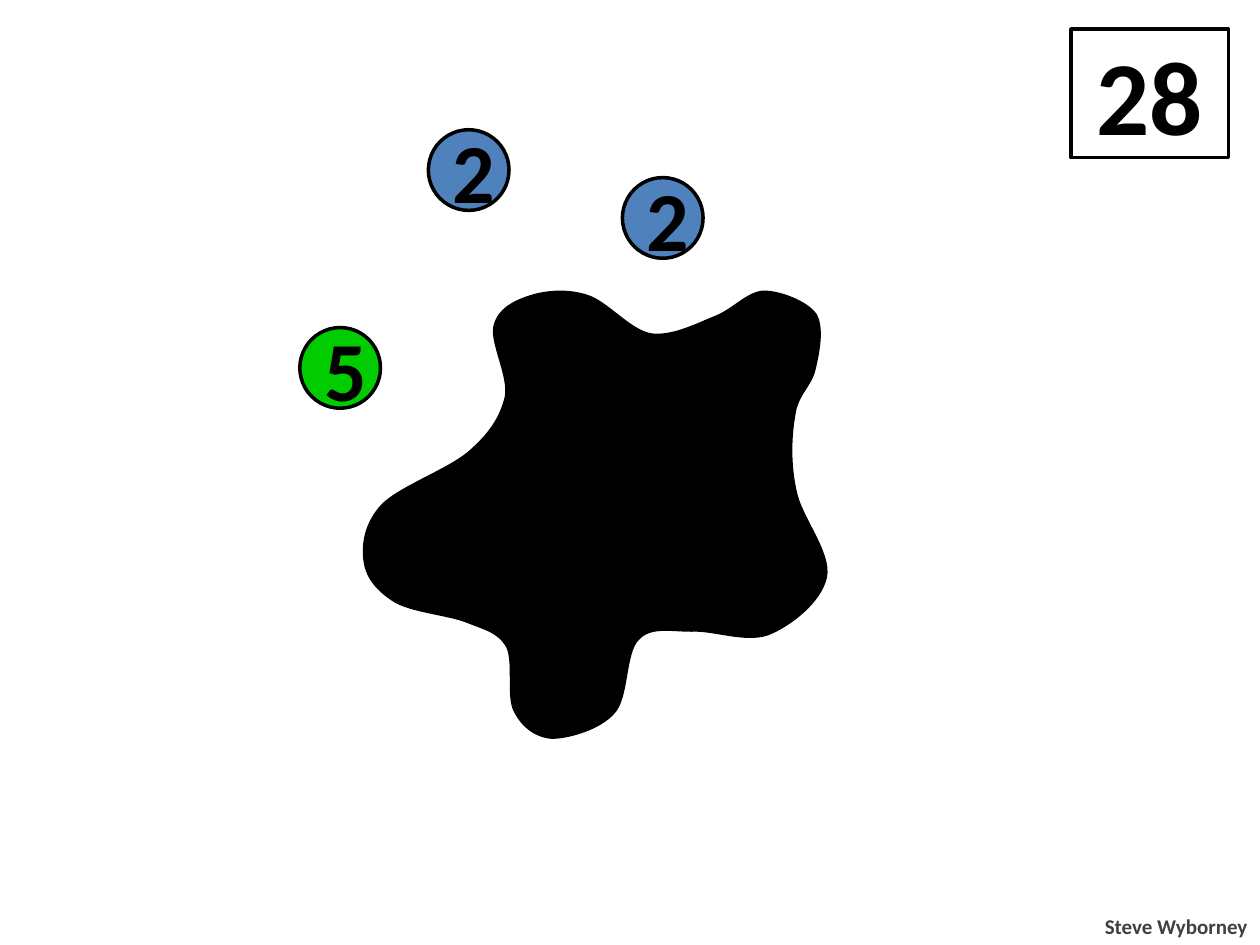
"""Build a number puzzle slide: a total, number discs and an ink blot over some of them."""
from dataclasses import dataclass

from pptx import Presentation
from pptx.dml.color import RGBColor
from pptx.enum.shapes import MSO_SHAPE
from pptx.enum.text import MSO_ANCHOR, MSO_AUTO_SIZE, PP_ALIGN
from pptx.oxml.ns import qn
from pptx.shapes.autoshape import Shape
from pptx.slide import Slide
from pptx.text.text import TextFrame
from pptx.util import Inches, Pt

RECTANGLE, OVAL = MSO_SHAPE.RECTANGLE, MSO_SHAPE.OVAL
CENTER, RIGHT = PP_ALIGN.CENTER, PP_ALIGN.RIGHT
MIDDLE = MSO_ANCHOR.MIDDLE
GROW = MSO_AUTO_SIZE.SHAPE_TO_FIT_TEXT


@dataclass(frozen=True)
class Theme:
    """Colours, font and sizes of the slide."""
    font: str = "Calibri"
    ink: str = "000000"
    paper: str = "FFFFFF"
    author: str = "404040"
    two: str = "4F81BD"
    five: str = "00CC00"
    total_size: int = 60
    disc_size: int = 48
    author_size: int = 12
    outline: int = 2


@dataclass(frozen=True)
class Disc:
    """A disc with its top left corner in inches and an optional number."""
    left: float
    top: float
    fill: str
    number: str = ""


THEME = Theme()
DISC_DIAMETER = 0.64
DISCS = (
    Disc(3.4, 1.03, THEME.two, "2"),
    Disc(4.94, 1.41, THEME.two, "2"),
    Disc(5.65, 2.64, THEME.two),
    Disc(4.23, 2.64, THEME.two),
    Disc(2.38, 2.6, THEME.five, "5"),
    Disc(5.52, 4.08, THEME.five),
    Disc(3.08, 3.89, THEME.five),
    Disc(4.23, 4.89, THEME.five),
)
BLOT_START = (3.14, 4.77)
BLOT_CURVES = (
    ((3.01, 4.69), (2.92, 4.59), (2.9, 4.46)),
    ((2.88, 4.33), (2.9, 4.16), (3.04, 4.01)),
    ((3.18, 3.87), (3.57, 3.73), (3.73, 3.59)),
    ((3.89, 3.45), (3.98, 3.32), (4.02, 3.15)),
    ((4.05, 2.98), (3.9, 2.72), (3.93, 2.59)),
    ((3.96, 2.46), (4.08, 2.4), (4.2, 2.36)),
    ((4.32, 2.32), (4.49, 2.3), (4.65, 2.35)),
    ((4.82, 2.4), (4.99, 2.63), (5.17, 2.66)),
    ((5.34, 2.68), (5.53, 2.58), (5.68, 2.52)),
    ((5.83, 2.46), (5.93, 2.33), (6.06, 2.32)),
    ((6.19, 2.32), (6.4, 2.4), (6.47, 2.5)),
    ((6.53, 2.61), (6.49, 2.8), (6.46, 2.93)),
    ((6.43, 3.06), (6.32, 3.13), (6.3, 3.29)),
    ((6.27, 3.45), (6.26, 3.68), (6.31, 3.9)),
    ((6.35, 4.11), (6.59, 4.39), (6.55, 4.58)),
    ((6.51, 4.77), (6.27, 4.96), (6.09, 5.03)),
    ((5.91, 5.09), (5.66, 4.99), (5.49, 5)),
    ((5.32, 5), (5.16, 4.96), (5.06, 5.07)),
    ((4.95, 5.18), (4.98, 5.53), (4.87, 5.65)),
    ((4.76, 5.78), (4.51, 5.85), (4.38, 5.85)),
    ((4.25, 5.84), (4.15, 5.76), (4.09, 5.64)),
    ((4.03, 5.53), (4.09, 5.25), (4.03, 5.13)),
    ((3.96, 5.01), (3.86, 4.99), (3.71, 4.93)),
    ((3.56, 4.87), (3.28, 4.85), (3.14, 4.77)),
)


def paint(shape: Shape, fill: str) -> None:
    """Give a shape a plain fill and the common outline."""
    shape.shadow.inherit = False
    shape.fill.solid()
    shape.fill.fore_color.rgb = RGBColor.from_string(fill)
    shape.line.color.rgb = RGBColor.from_string(THEME.ink)
    shape.line.width = Pt(THEME.outline)


def write(frame: TextFrame, text: str, size: int, color: str, align: PP_ALIGN) -> None:
    """Put one bold run into a text frame."""
    paragraph = frame.paragraphs[0]
    paragraph.alignment = align
    run = paragraph.add_run()
    run.text = text
    run.font.color.rgb = RGBColor.from_string(color)
    formats = {"name": THEME.font, "size": Pt(size), "bold": True}
    for attribute, value in formats.items():
        setattr(run.font, attribute, value)


def add_number(slide: Slide, kind: MSO_SHAPE, box: tuple[float, ...],
               number: str, size: int, fill: str) -> None:
    """Draw a filled shape, with a centred number if there is one."""
    holder = slide.shapes.add_shape(kind, *map(Inches, box))
    paint(holder, fill)
    if number:
        holder.text_frame.vertical_anchor = MIDDLE
        write(holder.text_frame, number, size, THEME.ink, CENTER)


def add_author(slide: Slide) -> None:
    """Write the author's name in the bottom right corner."""
    box = map(Inches, (8.66, 7.2, 1.34, 0.3))
    frame = slide.shapes.add_textbox(*box).text_frame
    frame.word_wrap = False
    frame.auto_size = GROW
    write(frame, "Steve Wyborney", THEME.author_size, THEME.author, RIGHT)


def add_blot(slide: Slide) -> None:
    """Draw the ink blot, turning each three points into one cubic curve."""
    builder = slide.shapes.build_freeform(*map(Inches, BLOT_START))
    points = [tuple(map(Inches, point)) for curve in BLOT_CURVES for point in curve]
    builder.add_line_segments(points, close=True)
    blot = builder.convert_to_shape()
    paint(blot, THEME.ink)
    segments = list(blot.element.iter(qn("a:lnTo")))
    for first in range(0, len(points), 3):
        handle, *others = segments[first:first + 3]
        curve = handle.makeelement(qn("a:cubicBezTo"), {})
        handle.addprevious(curve)
        for segment in (handle, *others):
            curve.append(segment[0])
            segment.getparent().remove(segment)


def main() -> None:
    """Assemble and save the slide."""
    deck = Presentation()
    deck.slide_width, deck.slide_height = Inches(10), Inches(7.5)
    slide = deck.slides.add_slide(deck.slide_layouts[6])
    add_number(slide, RECTANGLE, (8.5, 0.23, 1.25, 1.02), "28",
               THEME.total_size, THEME.paper)
    add_author(slide)
    for disc in DISCS:
        box = (disc.left, disc.top, DISC_DIAMETER, DISC_DIAMETER)
        add_number(slide, OVAL, box, disc.number, THEME.disc_size, disc.fill)
    add_blot(slide)
    deck.save("out.pptx")


if __name__ == "__main__":
    main()
